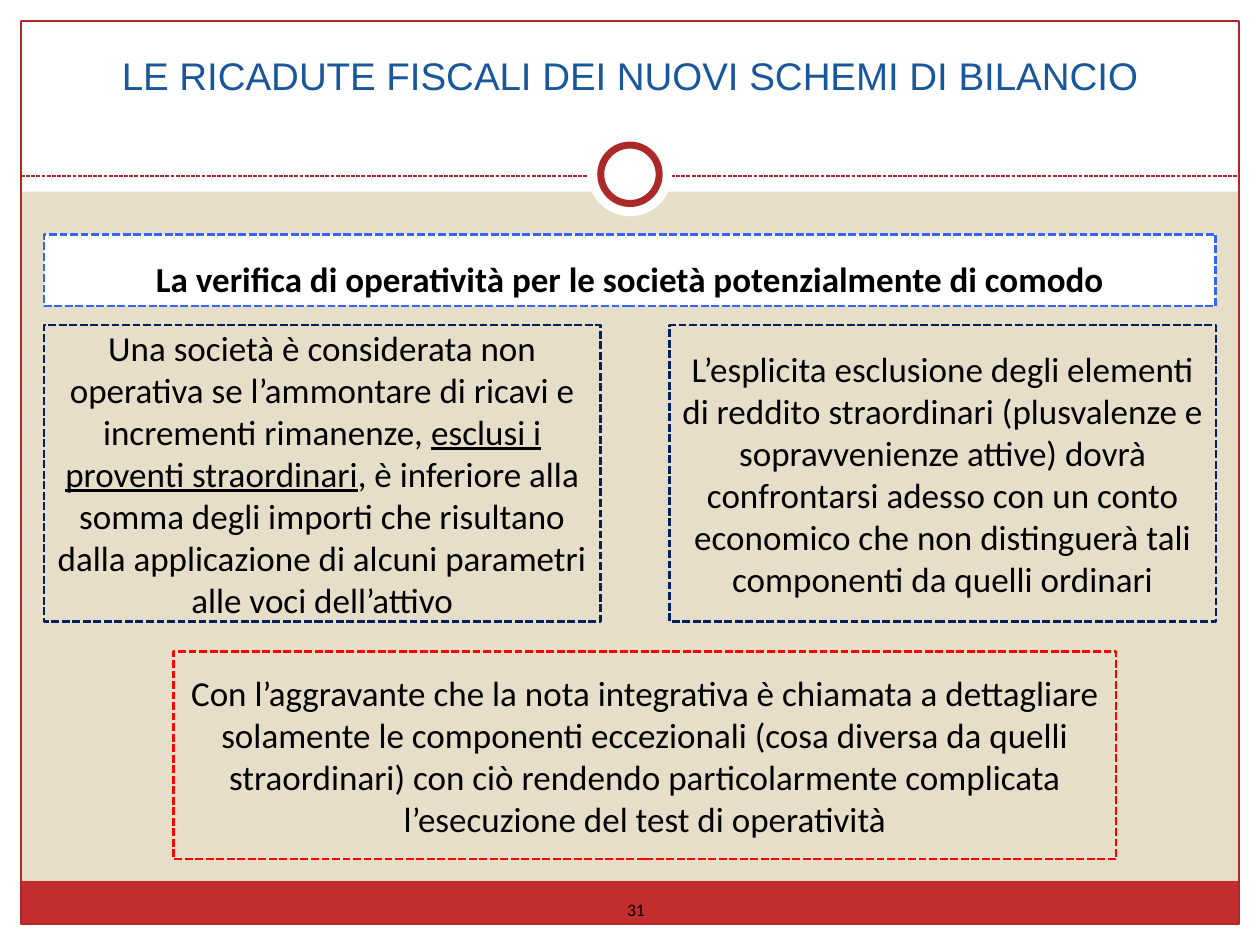
from lxml import etree
from pptx import Presentation
from pptx import util as u
from pptx.dml import color
from pptx.enum import dml, shapes, text
from pptx.oxml import ns

COLORS = {
    "sand": "E7DEC9", "white": "FFFFFF", "red": "C32D2E", "frame": "AC2829",
    "blue": "3366FF", "navy": "002060", "alert": "FF0000",
    "title": "18579B", "ink": "000000",
}
WIDTH, HEIGHT = 720, 540
EDGE = 12
INNER = WIDTH - 2 * EDGE
MARGIN = 25.2
CONTENT = WIDTH - 2 * MARGIN
COLUMN_TOP, COLUMN_HEIGHT = 185.8, 169.2


def assign(target, values):
    for key, value in values.items():
        setattr(target, key, value)


class SlideStyle:
    body = {"name": "Calibri", "size": u.Pt(20)}
    centred = {"alignment": text.PP_ALIGN.CENTER}

    def __init__(self, slide):
        self.slide = slide
        backdrop = slide.background.fill
        backdrop.solid()
        backdrop.fore_color.rgb = self.rgb("sand")

    def rgb(self, name):
        return color.RGBColor.from_string(COLORS[name])

    def stroke(self, line, name, weight, dashed):
        line.color.rgb = self.rgb(name)
        line.width = u.Pt(weight)
        if dashed:
            line.dash_style = dml.MSO_LINE.SQUARE_DOT

    def panel(self, area, fill=None, line=None, weight=1.5, dashed=False,
              kind=shapes.MSO_SHAPE.RECTANGLE):
        panel = self.slide.shapes.add_shape(kind, *map(u.Pt, area))
        panel.shadow.inherit = False
        if fill:
            panel.fill.solid()
            panel.fill.fore_color.rgb = self.rgb(fill)
        else:
            panel.fill.background()
        if line:
            self.stroke(panel.line, line, weight, dashed)
        else:
            panel.line.fill.background()
        return panel

    def ring(self, centre_y, diameter, **look):
        area = ((WIDTH - diameter) / 2, centre_y - diameter / 2, diameter, diameter)
        self.panel(area, kind=shapes.MSO_SHAPE.OVAL, **look)

    def divider(self, y):
        divider = self.slide.shapes.add_connector(
            shapes.MSO_CONNECTOR.STRAIGHT,
            *map(u.Pt, (EDGE, y, WIDTH - EDGE, y)))
        self.stroke(divider.line, "frame", 0.75, True)
        etree.SubElement(divider._element.spPr, ns.qn("a:effectLst"))

    def passage(self, frame, parts, font=None, paragraph=None, ink="ink",
                anchor=text.MSO_ANCHOR.MIDDLE):
        assign(frame, {"word_wrap": True, "vertical_anchor": anchor,
                       "auto_size": text.MSO_AUTO_SIZE.NONE})
        passage = frame.paragraphs[0]
        assign(passage, {**self.centred, **(paragraph or {})})
        for wording, emphasis in parts:
            run = passage.add_run()
            run.text = wording
            assign(run.font, {**self.body, **(font or {}), **emphasis})
            run.font.color.rgb = self.rgb(ink)

    def callout(self, area, line, parts, fill=None, **format_values):
        box = self.panel(area, fill=fill, line=line, dashed=True)
        self.passage(box.text_frame, parts, **format_values)

    def page_number(self, area, number):
        box = self.slide.shapes.add_textbox(*map(u.Pt, area))
        self.passage(box.text_frame, [(number, {})], font={"size": u.Pt(10)})

    def title(self, area, wording):
        heading = self.slide.shapes.title
        assign(heading, dict(zip(("left", "top", "width", "height"),
                                 map(u.Pt, area))))
        self.passage(heading.text_frame, [(wording, {})], ink="title",
                     font={"name": "Arial", "size": u.Pt(22)},
                     paragraph={"space_before": u.Pt(4.4)},
                     anchor=text.MSO_ANCHOR.TOP)
        self.slide.shapes._spTree.append(heading._element)


def main():
    deck = Presentation()
    assign(deck, {"slide_width": u.Pt(WIDTH), "slide_height": u.Pt(HEIGHT)})
    page = SlideStyle(deck.slides.add_slide(deck.slide_layouts[5]))

    for border in ((0, HEIGHT - EDGE, WIDTH, EDGE), (0, 0, WIDTH, 109.6),
                   (0, 0, EDGE, HEIGHT), (WIDTH - EDGE, 0, EDGE, HEIGHT)):
        page.panel(border, fill="white")
    page.panel((EDGE, 503.5, INNER, 24.5), fill="red")
    page.panel((EDGE, EDGE, INNER, HEIGHT - 2 * EDGE), line="frame", weight=0.75)
    page.divider(100.6)
    page.ring(99.6, 48, fill="white")
    page.ring(99.6, 33.4, fill="white", line="frame", weight=4)

    page.callout(
        (MARGIN, 133.9, CONTENT, 41), "blue",
        [("La verifica di operatività per le società potenzialmente di comodo", {})],
        fill="white", font={"bold": True}, paragraph={"line_spacing": 1.4})
    page.callout(
        (MARGIN, COLUMN_TOP, 317.8, COLUMN_HEIGHT), "navy",
        [("Una società è considerata non operativa se l’ammontare di ricavi e "
          "incrementi rimanenze, ", {}),
         ("esclusi i proventi straordinari", {"underline": True}),
         (", è inferiore alla somma degli importi che risultano dalla "
          "applicazione di alcuni parametri alle voci dell’attivo", {})])
    page.callout(
        (382.5, COLUMN_TOP, 312.3, COLUMN_HEIGHT), "navy",
        [("L’esplicita esclusione degli elementi di reddito straordinari "
          "(plusvalenze e sopravvenienze attive) dovrà confrontarsi adesso con "
          "un conto economico che non distinguerà tali componenti da quelli "
          "ordinari", {})])
    page.callout(
        (99.2, 372.2, 538.6, 118.8), "alert",
        [("Con l’aggravante che la nota integrativa è chiamata a dettagliare "
          "solamente le componenti eccezionali (cosa diversa da quelli "
          "straordinari) con ciò rendendo particolarmente complicata "
          "l’esecuzione del test di operatività", {})])

    page.page_number((342.9, 508.5, 41, 22.2), "31")
    page.title((MARGIN, 26, CONTENT, 39.6),
               "LE RICADUTE FISCALI DEI NUOVI SCHEMI DI BILANCIO")
    deck.save("out.pptx")


if __name__ == "__main__":
    main()
